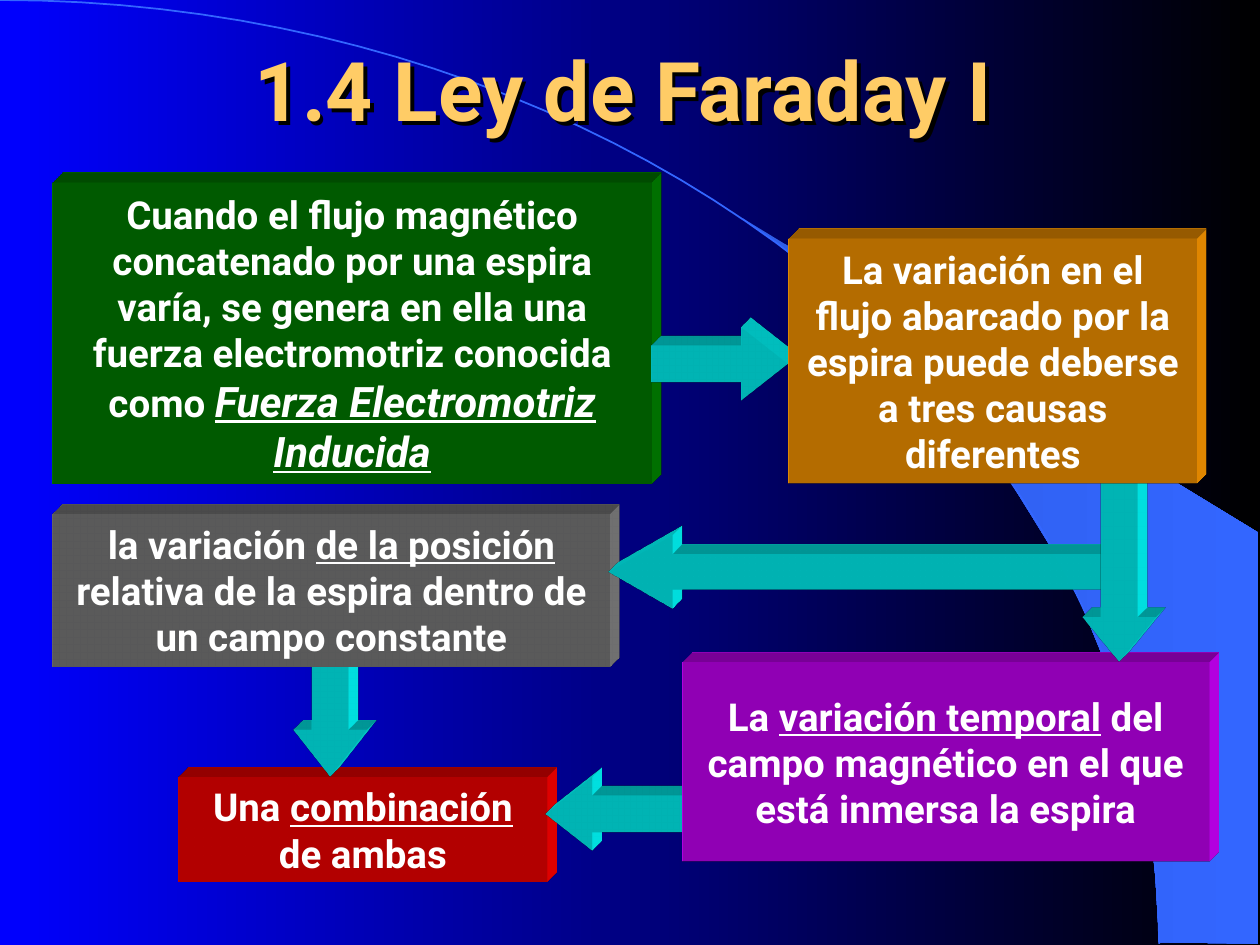
import math

import pptx
import pptx.dml.color
import pptx.enum.shapes
import pptx.enum.text
import pptx.oxml
import pptx.util

Inches = pptx.util.Inches
Pt = pptx.util.Pt
RGBColor = pptx.dml.color.RGBColor
MSO_ANCHOR = pptx.enum.text.MSO_ANCHOR
PP_ALIGN = pptx.enum.text.PP_ALIGN
BOX = pptx.enum.shapes.MSO_SHAPE.RECTANGLE
ARROW = pptx.enum.shapes.MSO_SHAPE.RIGHT_ARROW

FONT = "Roboto"
WHITE = RGBColor(0xFF, 0xFF, 0xFF)
BLACK = RGBColor(0x00, 0x00, 0x00)
BLUE = RGBColor(0x00, 0x00, 0xFF)
SWOOSH_DARK = RGBColor(0x2E, 0x5D, 0xE7)
SWOOSH_LIGHT = RGBColor(0x33, 0x66, 0xFF)
GOLD = RGBColor(0xFF, 0xCC, 0x66)
GREEN = RGBColor(0x00, 0x80, 0x00)
RED = RGBColor(0xFF, 0x00, 0x00)
GRAY = RGBColor(0x80, 0x80, 0x80)
PURPLE = RGBColor(0xCC, 0x00, 0xFF)
ORANGE = RGBColor(0xFF, 0x99, 0x00)
CYAN = RGBColor(0x00, 0xFF, 0xFF)

NAMESPACE = 'xmlns:a="http://schemas.openxmlformats.org/drawingml/2006/main"'
EXTRUSION_DEPTH = Inches(0.22)
SHADOW_DISTANCE = Inches(0.04)

# Text styles: size in points, italic, underlined
PLAIN = (22, False, False)
KEYWORD = (22, False, True)
TERM = (24, True, True)


def apply_gradient(fill, first, last):
    """Fill from left to right, from the first colour to the last."""
    fill.gradient()
    fill.gradient_angle = 0
    for position, (stop, color) in enumerate(zip(fill.gradient_stops, (first, last))):
        stop.color.rgb = color
        stop.position = position


def add_extruded_shape(kind, frame, color):
    """Add a preset shape that is extruded towards the top right."""
    shape = slide.shapes.add_shape(kind, *(Inches(length) for length in frame))
    shape.shadow.inherit = False
    shape.fill.solid()
    shape.fill.fore_color.rgb = color
    shape.line.fill.background()
    scene = (f'<a:scene3d {NAMESPACE}><a:camera prst="legacyObliqueTopRight"/>'
             '<a:lightRig rig="legacyFlat3" dir="b"/></a:scene3d>')
    solid = (f'<a:sp3d {NAMESPACE} extrusionH="{EXTRUSION_DEPTH}" '
             'prstMaterial="legacyMatte"><a:extrusionClr>'
             f'<a:srgbClr val="{color}"/></a:extrusionClr></a:sp3d>')
    for xml in (scene, solid):
        shape.element.spPr.append(pptx.oxml.parse_xml(xml))
    return shape


presentation = pptx.Presentation()
presentation.slide_width = Inches(10)
presentation.slide_height = Inches(7.5)
slide = presentation.slides.add_slide(presentation.slide_layouts[5])
apply_gradient(slide.background.fill, BLUE, BLACK)

# Background: a filled swoosh, and a quarter ellipse that ends at its foot
swoosh_points = [
    (9.2, 7.48), (9.99, 7.49), (9.99, 4.23), (5.89, 1.73), (6.24, 1.99),
    (6.53, 2.22), (6.85, 2.5), (7.16, 2.8), (7.62, 3.3), (8.03, 3.84),
    (8.32, 4.31), (8.58, 4.79), (8.78, 5.28), (8.93, 5.72), (9.03, 6.09),
    (9.13, 6.56), (9.17, 6.96)]
ARC_WIDTH, ARC_HEIGHT = 9.2, 7.49
arc_angles = [math.radians(degrees) for degrees in range(0, 91, 2)]
arc_points = [(ARC_WIDTH * math.sin(angle), ARC_HEIGHT * (1 - math.cos(angle)))
              for angle in arc_angles]
outlines = []
for points, closed in ((swoosh_points, True), (arc_points, False)):
    start, *others = [(Inches(x), Inches(y)) for x, y in points]
    builder = slide.shapes.build_freeform(*start)
    builder.add_line_segments(others, close=closed)
    outline = builder.convert_to_shape()
    outline.shadow.inherit = False
    outlines.append(outline)
swoosh, arc = outlines
apply_gradient(swoosh.fill, SWOOSH_DARK, SWOOSH_LIGHT)
swoosh.line.fill.background()
arc.fill.background()
arc.line.color.rgb = SWOOSH_LIGHT
arc.line.width = Pt(1)

# Title, in front of the background; the unfilled shape's shadow falls from its text
title = slide.shapes.title
arc.element.addnext(title.element)
title.left, title.top = Inches(0.73), Inches(0.08)
title.width, title.height = Inches(8.44), Inches(1.25)
title.text_frame.text = "1.4 Ley de Faraday I"
title.text_frame.vertical_anchor = MSO_ANCHOR.MIDDLE
title_paragraph = title.text_frame.paragraphs[0]
title_paragraph.alignment = PP_ALIGN.CENTER
title_font = title_paragraph.runs[0].font
title_font.name = FONT
title_font.size = Pt(47)
title_font.bold = True
title_font.color.rgb = GOLD
title.fill.background()
title.element.spPr.append(pptx.oxml.parse_xml(
    f'<a:effectLst {NAMESPACE}><a:outerShdw dist="{SHADOW_DISTANCE}" dir="2700000">'
    f'<a:srgbClr val="{BLACK}"/></a:outerShdw></a:effectLst>'))

# Boxes and arrows from back to front. The last item of a box is its paragraphs,
# each a list of (text, style); that of an arrow is (rotation, shaft, head).
blocks = [
    (BOX, (0.42, 1.45, 4.75, 2.39), GREEN, [[
        ("Cuando el flujo magnético concatenado por una espira varía, se genera "
         "en ella una fuerza electromotriz conocida como ", PLAIN),
        ("Fuerza Electromotriz Inducida", TERM)]]),
    (BOX, (1.42, 6.17, 2.92, 0.83), RED, [
        [("Una ", PLAIN), ("combinación", KEYWORD)],
        [("de ambas", PLAIN)]]),
    (ARROW, (4.33, 6.17, 1.08, 0.58), CYAN, (180, 0.5, 0.64)),
    (ARROW, (2.08, 5.33, 1.08, 0.58), CYAN, (90, 0.5, 0.64)),
    (BOX, (0.42, 4.08, 4.42, 1.21), GRAY, [[
        ("la variación ", PLAIN), ("de la posición", KEYWORD),
        (" relativa de la espira dentro de un campo constante", PLAIN)]]),
    (BOX, (5.42, 5.26, 4.17, 1.58), PURPLE, [[
        ("La ", PLAIN), ("variación temporal", KEYWORD),
        (" del campo magnético en el que está inmersa la espira", PLAIN)]]),
    (ARROW, (4.83, 4.25, 3.92, 0.58), CYAN, (180, 0.49, 0.88)),
    (ARROW, (8.17, 4.25, 1.42, 0.58), CYAN, (90, 0.5, 0.61)),
    (ARROW, (5.17, 2.6, 1.08, 0.58), CYAN, (0, 0.5, 0.64)),
    (BOX, (6.26, 1.89, 3.24, 1.95), ORANGE, [[
        ("La variación en el flujo abarcado por la espira puede deberse a tres "
         "causas diferentes", PLAIN)]]),
]
for kind, frame, color, content in blocks:
    shape = add_extruded_shape(kind, frame, color)
    if kind == ARROW:
        shape.rotation, shape.adjustments[0], shape.adjustments[1] = content
        continue
    text_frame = shape.text_frame
    text_frame.word_wrap = True
    text_frame.auto_size = pptx.enum.text.MSO_AUTO_SIZE.SHAPE_TO_FIT_TEXT
    text_frame.vertical_anchor = MSO_ANCHOR.MIDDLE
    for index, pieces in enumerate(content):
        paragraph = text_frame.add_paragraph() if index else text_frame.paragraphs[0]
        paragraph.alignment = PP_ALIGN.CENTER
        for text, (size, italic, underline) in pieces:
            run = paragraph.add_run()
            run.text = text
            run.font.name = FONT
            run.font.size = Pt(size)
            run.font.bold = True
            run.font.italic = italic
            run.font.underline = underline
            run.font.color.rgb = WHITE

presentation.save("out.pptx")
